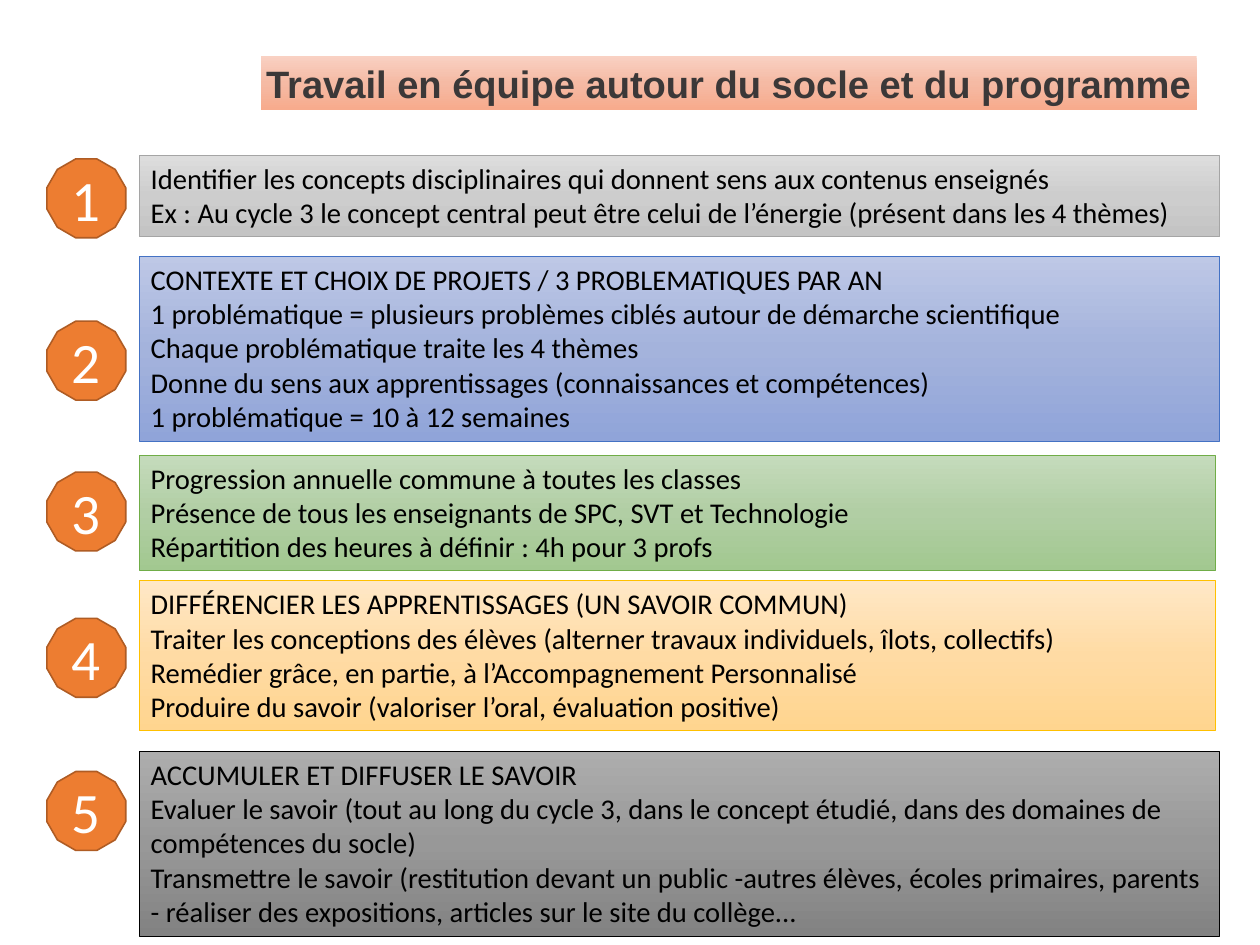
from copy import deepcopy

from pptx import Presentation
from pptx.dml.color import RGBColor
from pptx.enum.shapes import MSO_SHAPE
from pptx.enum.text import MSO_ANCHOR, MSO_AUTO_SIZE, PP_ALIGN
from pptx.oxml.ns import qn
from pptx.util import Inches, Pt

BLACK = RGBColor(0x00, 0x00, 0x00)
WHITE = RGBColor(0xFF, 0xFF, 0xFF)
CHARCOAL = RGBColor(0x3B, 0x38, 0x38)
ORANGE = RGBColor(0xED, 0x7D, 0x31)
BROWN = RGBColor(0xAF, 0x5C, 0x24)
GREY = RGBColor(0xA5, 0xA5, 0xA5)
BLUE = RGBColor(0x44, 0x72, 0xC4)
GREEN = RGBColor(0x70, 0xAD, 0x47)
GOLD = RGBColor(0xFF, 0xC0, 0x00)

# Gradient colours from top to bottom
SALMON_FADE = [RGBColor(0xF9, 0xD1, 0xC3), RGBColor(0xF5, 0xBA, 0xA4), RGBColor(0xF7, 0xAB, 0x8D)]
GREY_FADE = [RGBColor(0xDD, 0xDD, 0xDD), RGBColor(0xCD, 0xCD, 0xCD), RGBColor(0xC4, 0xC4, 0xC4)]
BLUE_FADE = [RGBColor(0xBE, 0xC8, 0xE6), RGBColor(0xA4, 0xB3, 0xDC), RGBColor(0x90, 0xA4, 0xD9)]
GREEN_FADE = [RGBColor(0xC5, 0xDB, 0xBC), RGBColor(0xB1, 0xCE, 0xA4), RGBColor(0xA2, 0xC8, 0x90)]
GOLD_FADE = [RGBColor(0xFF, 0xE8, 0xC7), RGBColor(0xFF, 0xDB, 0xA4), RGBColor(0xFF, 0xD5, 0x8F)]
DARK_FADE = [RGBColor(0xAD, 0xAD, 0xAD), RGBColor(0x98, 0x98, 0x98), RGBColor(0x82, 0x82, 0x82)]

CM_PER_INCH = 2.54
BADGE_LEFT, BADGE_SIZE = 0.41, 0.69
PANEL_LEFT = 1.22

# Badge top, panel top, width, height, gradient, outline, lines
STEPS = [
    (1.39, 1.36, 9.45, 0.71, GREY_FADE, GREY, [
        "Identifier les concepts disciplinaires qui donnent sens aux contenus enseignés",
        "Ex : Au cycle 3 le concept central peut être celui de l’énergie (présent dans les 4 thèmes)",
    ]),
    (2.81, 2.24, 9.45, 1.62, BLUE_FADE, BLUE, [
        "CONTEXTE ET CHOIX DE PROJETS / 3 PROBLEMATIQUES PAR AN",
        "1 problématique = plusieurs problèmes ciblés autour de démarche scientifique",
        "Chaque problématique traite les 4 thèmes",
        "Donne du sens aux apprentissages (connaissances et compétences)",
        "1 problématique = 10 à 12 semaines",
    ]),
    (4.13, 3.98, 9.41, 1.01, GREEN_FADE, GREEN, [
        "Progression annuelle commune à toutes les classes",
        "Présence de tous les enseignants de SPC, SVT et Technologie",
        "Répartition des heures à définir : 4h pour 3 profs",
    ]),
    (5.41, 5.08, 9.41, 1.31, GOLD_FADE, GOLD, [
        "DIFFÉRENCIER LES APPRENTISSAGES (UN SAVOIR COMMUN)",
        "Traiter les conceptions des élèves (alterner travaux individuels, îlots, collectifs)",
        "Remédier grâce, en partie, à l’Accompagnement Personnalisé",
        "Produire du savoir (valoriser l’oral, évaluation positive)",
    ]),
    (6.75, 6.57, 9.45, 1.62, DARK_FADE, BLACK, [
        "ACCUMULER ET DIFFUSER LE SAVOIR",
        "Evaluer le savoir (tout au long du cycle 3, dans le concept étudié, "
        "dans des domaines de compétences du socle)",
        "Transmettre le savoir (restitution devant un public -autres élèves, écoles primaires, "
        "parents - réaliser des expositions, articles sur le site du collège...",
    ]),
]


def fill_gradient(sp, colors):
    """Fill with three evenly spaced colours running downwards."""
    sp.fill.gradient()
    sp.fill.gradient_angle = 270
    stops = next(sp._element.spPr.iter(qn("a:gsLst")))
    stops.insert(1, deepcopy(stops[0]))
    for i, (stop, color) in enumerate(zip(sp.fill.gradient_stops, colors)):
        stop.position = i / 2
        stop.color.rgb = color


def write_lines(tf, lines, font_name, size, color, align):
    tf.text = "\n".join(lines)
    for p in tf.paragraphs:
        p.alignment = align
        p.font.name = font_name
        p.font.size = Pt(size)
        p.font.color.rgb = color


prs = Presentation()
prs.slide_width, prs.slide_height = Inches(28 / CM_PER_INCH), Inches(21 / CM_PER_INCH)
s = prs.slides.add_slide(prs.slide_layouts[5])

title = s.shapes.title
title.left, title.top = Inches(2.28), Inches(0.49)
title.width, title.height = Inches(8.19), Inches(0.47)
fill_gradient(title, SALMON_FADE)
tf = title.text_frame
write_lines(tf, ["Travail en équipe autour du socle et du programme"],
            "Arial", 24, CHARCOAL, PP_ALIGN.CENTER)
tf.paragraphs[0].font.bold = True
tf.auto_size = MSO_AUTO_SIZE.NONE
tf.word_wrap = False
tf.margin_left = tf.margin_right = Inches(0)
tf.vertical_anchor = MSO_ANCHOR.MIDDLE

for number, (badge_top, top, width, height, fade, outline, lines) in enumerate(STEPS, 1):
    panel = s.shapes.add_textbox(Inches(PANEL_LEFT), Inches(top), Inches(width), Inches(height))
    fill_gradient(panel, fade)
    panel.line.color.rgb = outline
    panel.line.width = Pt(0.5)
    tf = panel.text_frame
    tf.word_wrap = True
    tf.auto_size = MSO_AUTO_SIZE.SHAPE_TO_FIT_TEXT
    write_lines(tf, lines, "Calibri", 18, BLACK, PP_ALIGN.LEFT)

    badge = s.shapes.add_shape(MSO_SHAPE.DODECAGON, Inches(BADGE_LEFT), Inches(badge_top),
                               Inches(BADGE_SIZE), Inches(BADGE_SIZE))
    badge.shadow.inherit = False
    badge.fill.solid()
    badge.fill.fore_color.rgb = ORANGE
    badge.line.color.rgb = BROWN
    badge.line.width = Pt(1)
    badge.text_frame.vertical_anchor = MSO_ANCHOR.MIDDLE
    write_lines(badge.text_frame, [str(number)], "Calibri", 36, WHITE, PP_ALIGN.CENTER)

prs.save("out.pptx")
